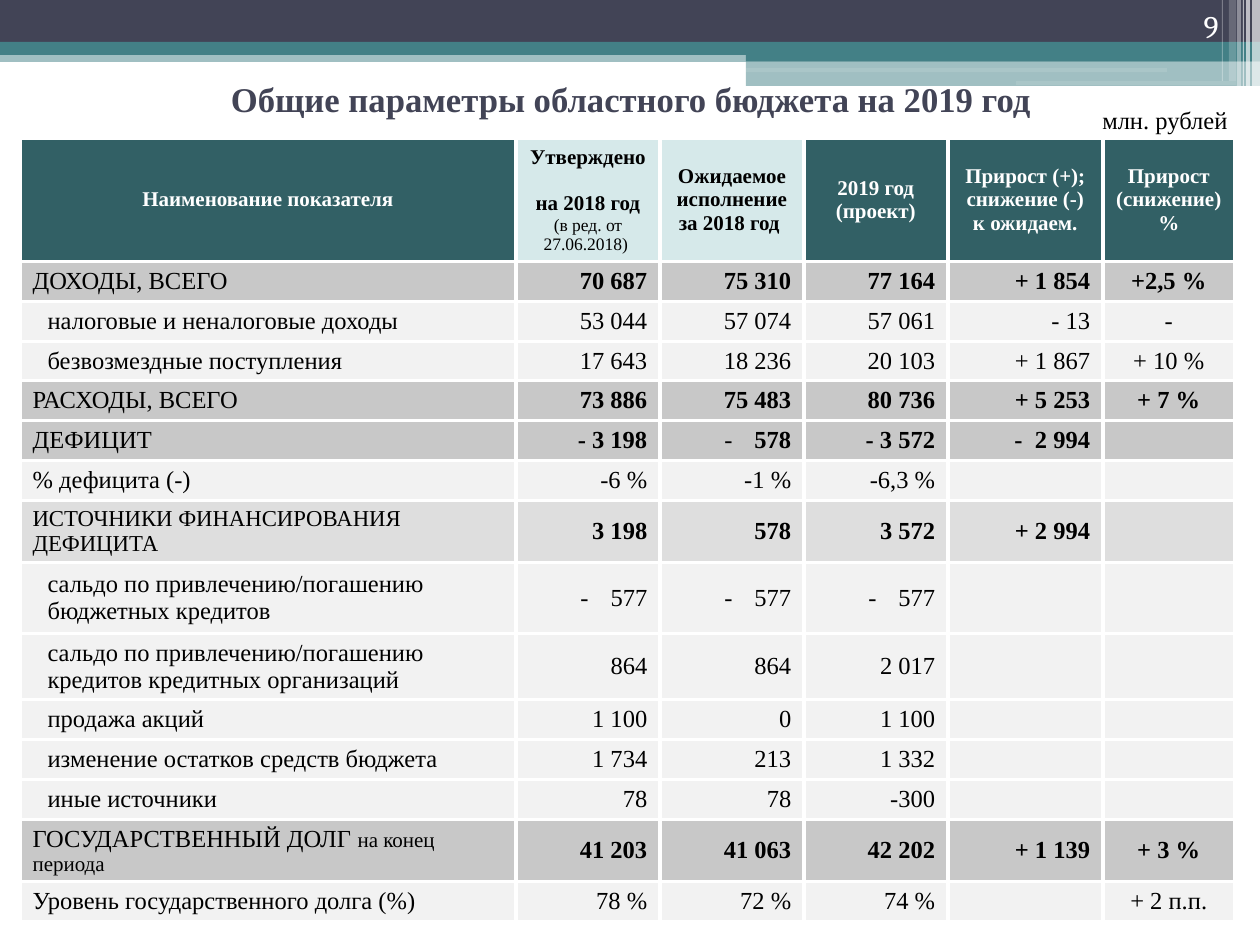
from copy import deepcopy
from dataclasses import dataclass
from typing import NamedTuple

from lxml.etree import SubElement
from pptx import Presentation
from pptx.dml.color import RGBColor
from pptx.enum.shapes import MSO_SHAPE
from pptx.enum.text import MSO_ANCHOR, PP_ALIGN
from pptx.oxml.ns import qn
from pptx.util import Emu, Pt

PX = 914400 / 126


def px(length: int) -> Emu:
    return Emu(round(length * PX))


@dataclass(frozen=True)
class Theme:
    navy: str = "424456"
    teal: str = "438086"
    dark_teal: str = "326065"
    pale_teal: str = "D6E9EA"
    white: str = "FFFFFF"
    black: str = "000000"
    total: str = "C8C8C8"
    subtotal: str = "DEDEDE"
    detail: str = "F2F2F2"
    serif: str = "Times New Roman"
    number_font: str = "Cambria"
    page_size: float = 18
    title_size: float = 19.8
    body_size: float = 14
    subtotal_size: float = 13
    header_size: float = 12
    note_size: float = 10
    border_width: float = 2.25


THEME = Theme()


class Band(NamedTuple):
    left: int
    top: int
    width: int
    height: int
    color: str
    opacity: int = 100
    rounded: bool = False


class Heading(NamedTuple):
    text: str
    dark: bool = True
    note: str = ""


class Dashed(NamedTuple):
    text: str


class Indicator(NamedTuple):
    label: str
    values: tuple
    height: int = 40
    fill: str = THEME.detail
    indent: int = 0
    label_size: float = THEME.body_size
    note: str = ""


BANDS = [
    Band(0, 50, 1260, 12, THEME.teal, 50),
    Band(0, 0, 1260, 42, THEME.navy),
    Band(0, 42, 1260, 13, THEME.teal),
    Band(746, 49, 514, 12, THEME.teal),
    Band(746, 61, 514, 25, THEME.teal, 50),
    Band(745, 68, 422, 4, THEME.white, 11, True),
    Band(1016, 81, 220, 4, THEME.white, 11, True),
    Band(1252, 0, 8, 86, THEME.white, 65),
    Band(1246, 0, 4, 86, THEME.white, 65),
    Band(1243, 0, 1, 86, THEME.white, 60),
    Band(1237, 0, 4, 86, THEME.white, 40),
    Band(1229, 0, 7, 81, THEME.white, 20),
    Band(1222, 0, 1, 81, THEME.white, 30),
]

COLUMN_WIDTHS = [496, 144, 144, 144, 155, 132]
HEADER_HEIGHT = 121
CELL_MARGIN = 3
HEADINGS = [
    Heading("Наименование показателя"),
    Heading("Утверждено \vна 2018 год", False, "(в ред. от 27.06.2018) "),
    Heading("Ожидаемое исполнение за 2018 год ", False),
    Heading("2019 год\n(проект)"),
    Heading("Прирост (+); снижение (-) к ожидаем."),
    Heading("Прирост (снижение) %"),
]

INDICATORS = [
    Indicator("ДОХОДЫ, ВСЕГО", ("70 687", "75 310", "77 164", "+ 1 854", "+2,5 %"), fill=THEME.total),
    Indicator("налоговые и неналоговые доходы", ("53 044", "57 074", "57 061", "- 13", "-"), indent=15),
    Indicator("безвозмездные поступления", ("17 643", "18 236", "20 103", "+ 1 867", "+ 10 %"),
              39, indent=15),
    Indicator("РАСХОДЫ, ВСЕГО", ("73 886", "75 483", "80 736", "+ 5 253", "+ 7 %"), fill=THEME.total),
    Indicator("ДЕФИЦИТ", ("- 3 198", Dashed("578"), "- 3 572", "-  2 994", ""), fill=THEME.total),
    Indicator("% дефицита (-)", ("-6 %", "-1 %", "-6,3 %", "", "")),
    Indicator("ИСТОЧНИКИ ФИНАНСИРОВАНИЯ ДЕФИЦИТА", ("3 198", "578", "3 572", "+ 2 994", ""),
              62, THEME.subtotal, label_size=THEME.subtotal_size),
    Indicator("сальдо по привлечению/погашению \vбюджетных кредитов",
              (Dashed("577"), Dashed("577"), Dashed("577"), "", ""), 71, indent=15),
    Indicator("сальдо по привлечению/погашению кредитов кредитных организаций",
              ("864", "864", "2 017", "", ""), 66, indent=15),
    Indicator("продажа акций", ("1 100", "0", "1 100", "", ""), indent=15),
    Indicator("изменение остатков средств бюджета", ("1 734", "213", "1 332", "", ""), indent=15),
    Indicator("иные источники", ("78", "78", "-300", "", ""), indent=15),
    Indicator("ГОСУДАРСТВЕННЫЙ ДОЛГ ", ("41 203", "41 063", "42 202", "+ 1 139", "+ 3 %"),
              62, THEME.total, note="на конец периода"),
    Indicator("Уровень государственного долга (%)", ("78 %", "72 %", "74 %", "", "+ 2 п.п.")),
]


def write_text(frame, text: str, *, size: float = THEME.body_size, bold: bool = False,
               color: str = THEME.black, font: str = THEME.serif, align=PP_ALIGN.LEFT,
               indent: int = 0, dashed: bool = False, same_line: bool = False) -> None:
    for line in text.split("\n"):
        paragraph = frame.paragraphs[-1]
        if paragraph.runs and not same_line:
            paragraph = frame.add_paragraph()
        paragraph.alignment = align
        properties = paragraph._p.get_or_add_pPr()
        if indent:
            properties.set("marL", str(px(indent)))
            properties.set("indent", "0")
        if dashed:
            properties.set("marL", str(px(30)))
            properties.set("indent", str(-px(30)))
            SubElement(properties, qn("a:buFont")).set("typeface", font)
            SubElement(properties, qn("a:buChar")).set("char", "-")
        if not line:
            paragraph._p.get_or_add_endParaRPr().set("sz", str(round(size * 100)))
            continue
        for index, part in enumerate(line.split("\v")):
            if index:
                line_break = paragraph._p.add_br()
                line_break.append(deepcopy(run._r.rPr))
            run = paragraph.add_run()
            run.text = part
            run.font.size = Pt(size)
            run.font.bold = bold
            run.font.name = font
            run.font.color.rgb = RGBColor.from_string(color)


def draw_band(slide, band: Band) -> None:
    preset = MSO_SHAPE.ROUNDED_RECTANGLE if band.rounded else MSO_SHAPE.RECTANGLE
    shape = slide.shapes.add_shape(preset, *map(px, band[:4]))
    shape.shadow.inherit = False
    shape.line.fill.background()
    shape.fill.solid()
    shape.fill.fore_color.rgb = RGBColor.from_string(band.color)
    if band.opacity < 100:
        tint = shape.fill._xPr.find(".//" + qn("a:srgbClr"))
        SubElement(tint, qn("a:alpha")).set("val", str(band.opacity * 1000))


def draw_label(slide, bounds: tuple, text: str, anchor, **text_format) -> None:
    frame = slide.shapes.add_textbox(*map(px, bounds)).text_frame
    frame.word_wrap = True
    frame.vertical_anchor = anchor
    write_text(frame, text, **text_format)


def style_cell(cell, fill: str) -> None:
    cell.vertical_anchor = MSO_ANCHOR.MIDDLE
    cell.margin_top = cell.margin_bottom = px(CELL_MARGIN)
    properties = cell._tc.get_or_add_tcPr()
    for side in ("lnL", "lnR", "lnT", "lnB"):
        border = SubElement(properties, qn(f"a:{side}"), w=str(Pt(THEME.border_width)))
        SubElement(SubElement(border, qn("a:solidFill")), qn("a:srgbClr")).set("val", THEME.white)
    cell.fill.solid()
    cell.fill.fore_color.rgb = RGBColor.from_string(fill)


def draw_heading(cell, heading: Heading) -> None:
    style_cell(cell, THEME.dark_teal if heading.dark else THEME.pale_teal)
    color = THEME.white if heading.dark else THEME.black
    write_text(cell.text_frame, heading.text, size=THEME.header_size, bold=True,
               color=color, align=PP_ALIGN.CENTER)
    if heading.note:
        write_text(cell.text_frame, heading.note, size=THEME.note_size, color=color,
                   align=PP_ALIGN.CENTER)


def draw_indicator(cells: list, indicator: Indicator) -> None:
    for cell in cells:
        style_cell(cell, indicator.fill)
    label = cells[0].text_frame
    write_text(label, indicator.label, size=indicator.label_size, indent=indicator.indent)
    if indicator.note:
        write_text(label, indicator.note, size=THEME.header_size, same_line=True)
    for column, value in enumerate(indicator.values, start=1):
        dashed = isinstance(value, Dashed)
        is_percent = column == len(indicator.values)
        write_text(cells[column].text_frame, value.text if dashed else value,
                   bold=indicator.fill != THEME.detail, dashed=dashed,
                   align=PP_ALIGN.CENTER if is_percent else PP_ALIGN.RIGHT)


def draw_budget(slide) -> None:
    heights = [HEADER_HEIGHT] + [indicator.height for indicator in INDICATORS]
    budget = slide.shapes.add_table(len(heights), len(COLUMN_WIDTHS), px(20), px(138),
                                    px(sum(COLUMN_WIDTHS)), px(sum(heights))).table
    for column, width in zip(budget.columns, COLUMN_WIDTHS):
        column.width = px(width)
    for row, height in zip(budget.rows, heights):
        row.height = px(height)
    for column, heading in enumerate(HEADINGS):
        draw_heading(budget.cell(0, column), heading)
    for row, indicator in enumerate(INDICATORS, start=1):
        draw_indicator(list(budget.rows[row].cells), indicator)


def main() -> None:
    deck = Presentation()
    deck.slide_width, deck.slide_height = px(1260), px(945)
    slide = deck.slides.add_slide(deck.slide_layouts[6])
    for band in BANDS:
        draw_band(slide, band)
    draw_label(slide, (1126, 0, 105, 51), "9", MSO_ANCHOR.BOTTOM, size=THEME.page_size,
               font=THEME.number_font, color=THEME.white, align=PP_ALIGN.RIGHT)
    draw_label(slide, (187, 69, 896, 59), "Общие параметры областного бюджета на 2019 год ",
               MSO_ANCHOR.MIDDLE, size=THEME.title_size, bold=True, color=THEME.navy,
               align=PP_ALIGN.CENTER)
    draw_budget(slide)
    draw_label(slide, (1053, 99, 187, 43), "млн. рублей", MSO_ANCHOR.TOP, align=PP_ALIGN.RIGHT)
    deck.save("out.pptx")


if __name__ == "__main__":
    main()
